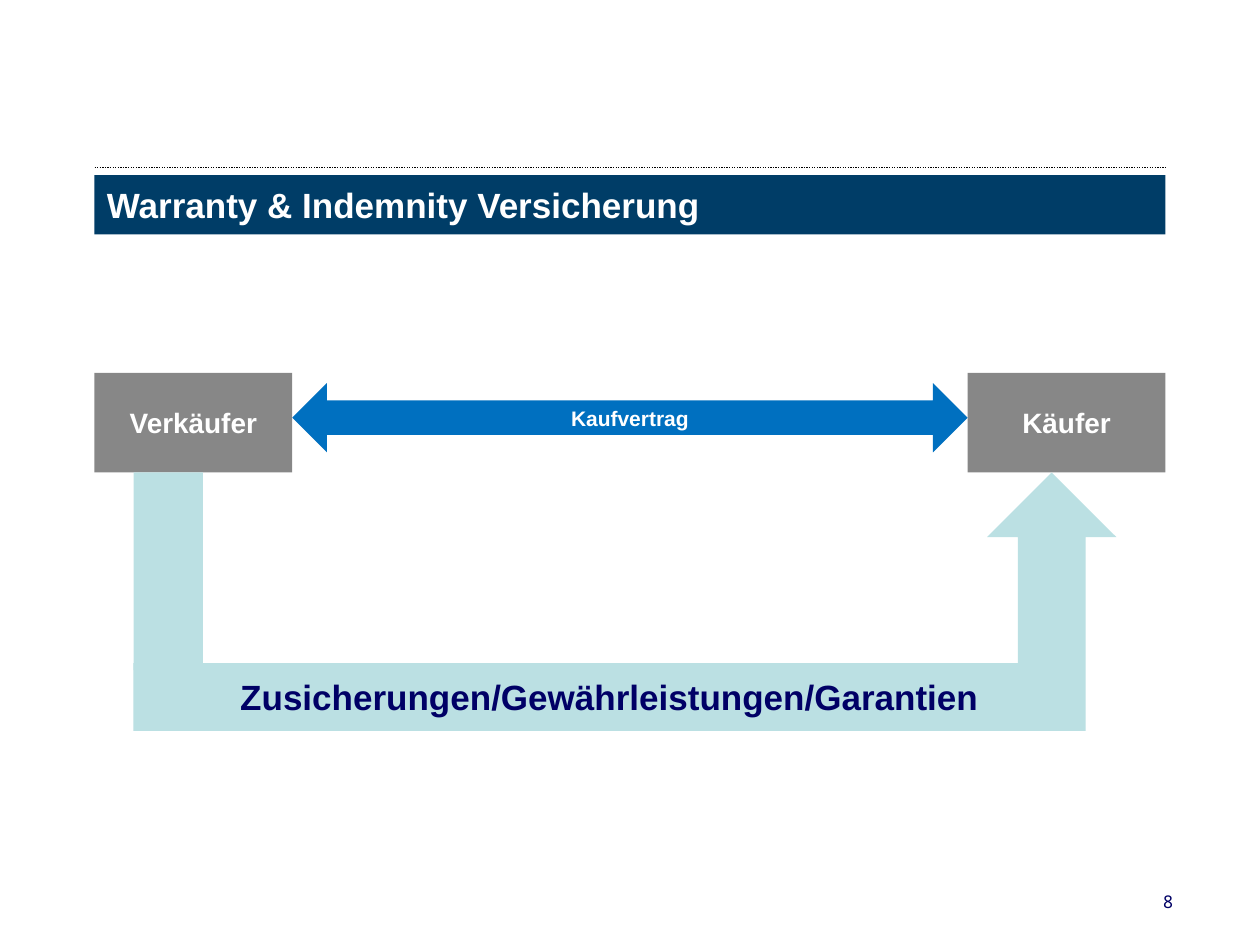
from dataclasses import dataclass

from lxml import etree
from pptx import Presentation
from pptx.dml.color import RGBColor
from pptx.enum.dml import MSO_LINE
from pptx.enum.shapes import MSO_CONNECTOR, MSO_SHAPE
from pptx.enum.text import MSO_ANCHOR, PP_ALIGN
from pptx.oxml.ns import qn
from pptx.util import Inches, Pt


@dataclass(frozen=True)
class Theme:
    font: str = "Arial"
    number_font: str = "Noto Sans Mono"
    black: RGBColor = RGBColor.from_string("000000")
    white: RGBColor = RGBColor.from_string("FFFFFF")
    navy: RGBColor = RGBColor.from_string("000066")
    banner: RGBColor = RGBColor.from_string("003D67")
    party: RGBColor = RGBColor.from_string("808080")
    contract: RGBColor = RGBColor.from_string("0070C0")
    warranty: RGBColor = RGBColor.from_string("BBE0E3")
    large: int = 20
    medium: int = 16
    small: int = 12
    tiny: int = 10


THEME = Theme()


def write_text(shape, text, size, color, alignment=PP_ALIGN.CENTER,
               anchor=MSO_ANCHOR.MIDDLE, font=THEME.font, bold=True):
    frame = shape.text_frame
    frame.word_wrap = True
    frame.vertical_anchor = anchor
    frame.text = text
    paragraph = frame.paragraphs[0]
    paragraph.alignment = alignment
    run_font = paragraph.runs[0].font
    run_font.name = font
    run_font.size = Pt(size)
    run_font.bold = bold
    run_font.color.rgb = color


def add_filled(slide, kind, left, top, width, height, color):
    """Add a borderless, shadowless shape; lengths are in inches."""
    shape = slide.shapes.add_shape(
        kind, Inches(left), Inches(top), Inches(width), Inches(height))
    shape.shadow.inherit = False
    shape.fill.solid()
    shape.fill.fore_color.rgb = color
    shape.line.fill.background()
    return shape


def set_opacity(shape, percent):
    color = shape.fill._xPr.find(qn("a:solidFill"))[0]
    etree.SubElement(color, qn("a:alpha"), val=str(percent * 1000))


def add_header(slide, left, top, width, height):
    """Dotted rule with the title banner just below it."""
    rule = slide.shapes.add_connector(
        MSO_CONNECTOR.STRAIGHT, Inches(left), Inches(top),
        Inches(left + width), Inches(top))
    rule.line.color.rgb = THEME.black
    rule.line.width = Pt(0.75)
    rule.line.dash_style = MSO_LINE.ROUND_DOT
    etree.SubElement(rule._element.spPr, qn("a:effectLst"))

    gap = 0.06
    banner = add_filled(slide, MSO_SHAPE.RECTANGLE, left, top + gap,
                        width, height - gap, THEME.banner)
    write_text(banner, "Warranty & Indemnity Versicherung", THEME.large,
               THEME.white, PP_ALIGN.LEFT)


def add_parties(slide, left, top, width, height):
    """Seller and buyer at the two ends, joined by the purchase contract."""
    party_width = 1.57
    for name, party_left in (("Verkäufer", left),
                             ("Käufer", left + width - party_width)):
        party = add_filled(slide, MSO_SHAPE.RECTANGLE, party_left, top,
                           party_width, height, THEME.party)
        set_opacity(party, 94)
        write_text(party, name, THEME.medium, THEME.white)

    contract = add_filled(slide, MSO_SHAPE.LEFT_RIGHT_ARROW,
                          left + party_width, top + 0.08,
                          width - 2 * party_width, 0.55, THEME.contract)
    write_text(contract, "Kaufvertrag", THEME.small, THEME.white)


def add_warranties(slide, left, top, width, height):
    """U-shaped arrow leading from the seller to the buyer."""
    arrow = add_filled(slide, MSO_SHAPE.BENT_UP_ARROW, left, top,
                       width, height, THEME.warranty)
    arrow.adjustments[0] = 0.262
    arrow.adjustments[1] = 0.25
    arrow.adjustments[2] = 0.25
    write_text(arrow, "Zusicherungen/Gewährleistungen/Garantien",
               THEME.large, THEME.navy)
    add_filled(slide, MSO_SHAPE.RECTANGLE, left, top, 0.55, 1.57,
               THEME.warranty)


def add_page_number(slide, left, top, width, height):
    box = slide.shapes.add_textbox(
        Inches(left), Inches(top), Inches(width), Inches(height))
    write_text(box, "8", THEME.tiny, THEME.navy, PP_ALIGN.RIGHT,
               MSO_ANCHOR.TOP, THEME.number_font, bold=False)


def main():
    presentation = Presentation()
    presentation.slide_width = Inches(10)
    presentation.slide_height = Inches(7.5)
    slide = presentation.slides.add_slide(presentation.slide_layouts[6])

    margin, content_width = 0.75, 8.5
    parties_top, parties_height = 2.96, 0.79
    add_header(slide, margin, 1.33, content_width, 0.53)
    add_parties(slide, margin, parties_top, content_width, parties_height)
    add_warranties(slide, 1.06, parties_top + parties_height, 7.8, 2.05)
    add_page_number(slide, 8.62, 7.02, 0.79, 0.5)

    presentation.save("out.pptx")


if __name__ == "__main__":
    main()
